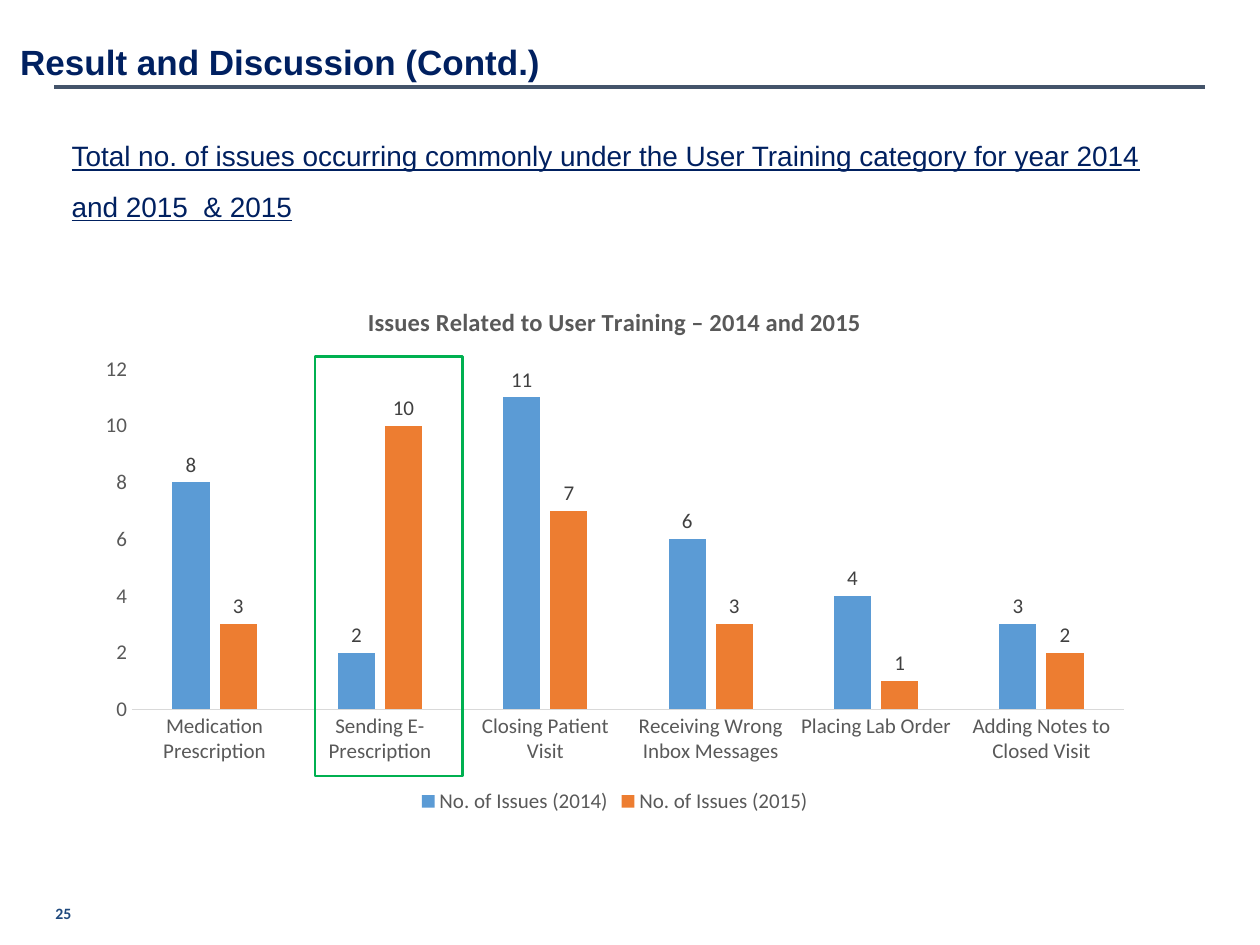
from pptx import Presentation
from pptx.chart.data import CategoryChartData
from pptx.dml.color import RGBColor
from pptx.enum.chart import XL_CHART_TYPE as ChartType, XL_LABEL_POSITION as LabelPosition
from pptx.enum.chart import XL_LEGEND_POSITION as LegendPosition, XL_TICK_MARK as TickMark
from pptx.enum.shapes import MSO_CONNECTOR as Connector, MSO_SHAPE as Shape
from pptx.enum.text import MSO_ANCHOR as Anchor, PP_ALIGN as Align
from pptx.oxml.ns import qn
from pptx.util import Inches, Pt
from lxml import etree

# Content
TITLE = "Result and Discussion (Contd.)"
SUBTITLE = ("Total no. of issues occurring commonly under the User Training "
            "category for year 2014 and 2015  & 2015")
PAGE_NUMBER = "25"
CHART_TITLE = "Issues Related to User Training – 2014 and 2015"
CATEGORIES = ["Medication Prescription", "Sending E- Prescription",
              "Closing Patient Visit", "Receiving Wrong Inbox Messages",
              "Placing Lab Order", "Adding Notes to Closed Visit"]
SERIES = [("No. of Issues (2014)", (8, 2, 11, 6, 4, 3), "blue"),
          ("No. of Issues (2015)", (3, 10, 7, 3, 1, 2), "orange")]
COLORS = {"navy": "002060", "rule": "44546A", "page": "1F497D", "gray": "595959",
          "label": "404040", "axis": "D9D9D9", "blue": "5B9BD5",
          "orange": "ED7D31", "highlight": "00B050"}


def color(name):
    return RGBColor.from_string(COLORS[name])


def set_font(font, name, size, color_name, bold=False, underline=None):
    font.name, font.size, font.bold = name, Pt(size), bold
    font.color.rgb = color(color_name)
    if underline is not None:
        font.underline = underline


def place(shape, left, top, width, height):
    shape.left, shape.top = Inches(left), Inches(top)
    shape.width, shape.height = Inches(width), Inches(height)


def add_text(slide, text, box, margin=None):
    frame = slide.shapes.add_textbox(*map(Inches, box)).text_frame
    frame.word_wrap = True
    frame.text = text
    if margin is not None:
        frame.margin_left = frame.margin_right = Inches(margin)
        frame.margin_top = frame.margin_bottom = Inches(margin)
    return frame.paragraphs[0]


def add_issue_chart(slide):
    data = CategoryChartData()
    data.categories = CATEGORIES
    for name, values, _ in SERIES:
        data.add_series(name, values)
    box = map(Inches, (0.67, 2.25, 8.42, 4.25))
    chart = slide.shapes.add_chart(ChartType.COLUMN_CLUSTERED, *box, data).chart
    chart.font.name, chart.font.size = "Calibri", Pt(10)

    # Title and legend
    chart.has_title = True
    chart.chart_title.include_in_layout = False
    chart.chart_title.text_frame.text = CHART_TITLE
    run = chart.chart_title.text_frame.paragraphs[0].runs[0]
    set_font(run.font, "Calibri", 14, "gray", bold=True)
    chart.has_legend = True
    chart.legend.position = LegendPosition.BOTTOM
    chart.legend.include_in_layout = False
    set_font(chart.legend.font, "Calibri", 12, "gray")

    # Axes
    for axis in (chart.category_axis, chart.value_axis):
        axis.major_tick_mark = axis.minor_tick_mark = TickMark.NONE
        axis.has_major_gridlines = False
        set_font(axis.tick_labels.font, "Calibri", 12, "gray")
    chart.category_axis.format.line.color.rgb = color("axis")
    chart.category_axis.format.line.width = Pt(0.75)
    chart.value_axis.format.line.fill.background()
    chart.value_axis.minimum_scale, chart.value_axis.maximum_scale = 0, 12
    chart.value_axis.major_unit = 2

    # Columns and value labels
    plot = chart.plots[0]
    plot.gap_width, plot.overlap = 219, -27
    plot.vary_by_categories = False
    for series, (_, _, fill) in zip(plot.series, SERIES):
        series.format.fill.solid()
        series.format.fill.fore_color.rgb = color(fill)
        labels = series.data_labels
        labels.show_value = True
        labels.position = LabelPosition.OUTSIDE_END
        set_font(labels.font, "Calibri", 12, "label")


def main():
    presentation = Presentation()
    presentation.slide_width, presentation.slide_height = Inches(10), Inches(7.5)
    slide = presentation.slides.add_slide(presentation.slide_layouts[5])

    # Rule under the title
    rule = slide.shapes.add_connector(Connector.STRAIGHT, Inches(0.43), Inches(0.69),
                                      Inches(9.56), Inches(0.69))
    rule.line.color.rgb, rule.line.width = color("rule"), Pt(2.25)
    etree.SubElement(rule._element.spPr, qn("a:effectLst"))

    # Title
    title = slide.shapes.title
    place(title, 0, 0.27, 9.24, 0.48)
    title.text_frame.text = TITLE
    title.text_frame.vertical_anchor = Anchor.MIDDLE
    title.text_frame.margin_left = Inches(0.16)
    paragraph = title.text_frame.paragraphs[0]
    paragraph.alignment, paragraph.line_spacing = Align.LEFT, 0.9
    set_font(paragraph.runs[0].font, "Arial", 20, "navy", bold=True)

    # Subtitle and page number
    paragraph = add_text(slide, SUBTITLE, (0.47, 0.92, 8.83, 2.15))
    paragraph.line_spacing = 1.5
    set_font(paragraph.runs[0].font, "Arial", 16, "navy", underline=True)
    paragraph = add_text(slide, PAGE_NUMBER, (0.44, 7.17, 0.33, 0.16), margin=0)
    paragraph.line_spacing = Pt(10.8)
    set_font(paragraph.runs[0].font, "Calibri", 9, "page", bold=True)

    # Chart with one category framed
    add_issue_chart(slide)
    frame = slide.shapes.add_shape(Shape.RECTANGLE, *map(Inches, (2.5, 2.83, 1.17, 3.33)))
    frame.shadow.inherit = False
    frame.fill.background()
    frame.line.color.rgb, frame.line.width = color("highlight"), Pt(1.5)

    presentation.save("out.pptx")


if __name__ == "__main__":
    main()
